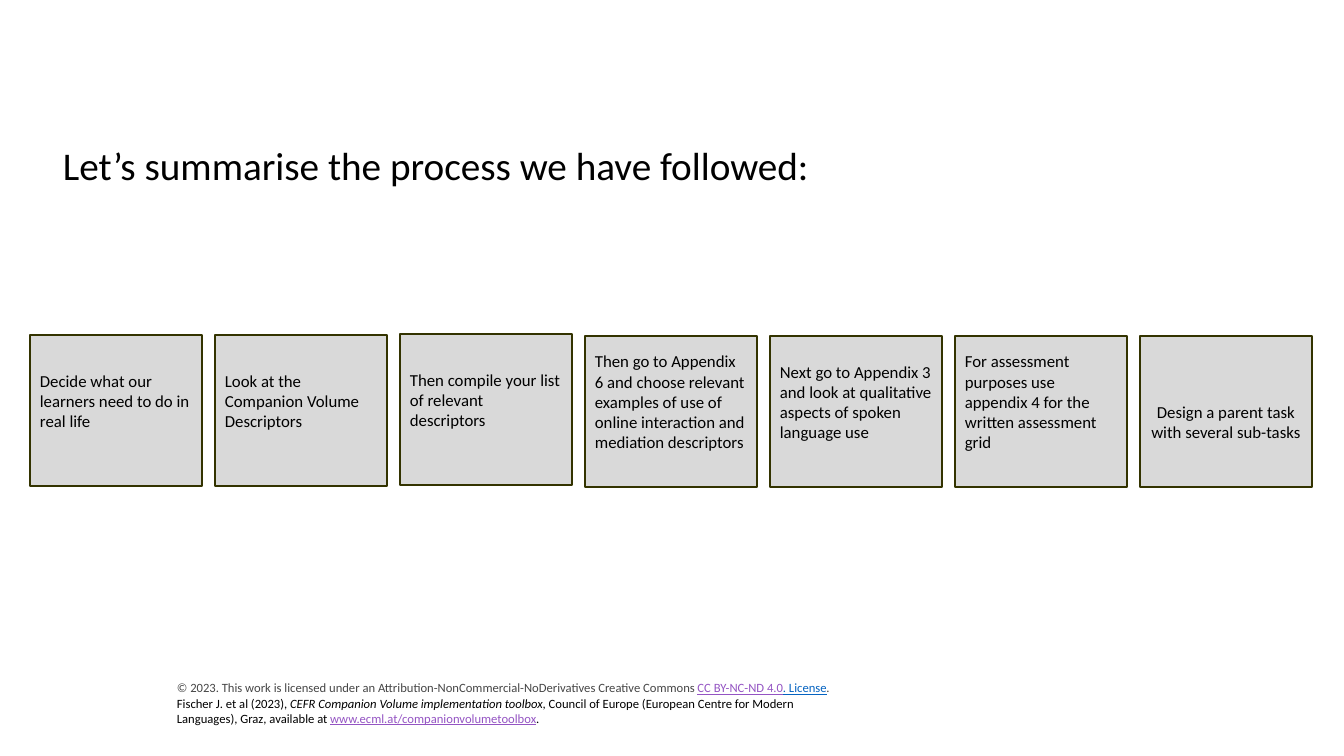
from pptx import Presentation
from pptx.dml.color import RGBColor
from pptx.enum.shapes import MSO_SHAPE
from pptx.enum.text import MSO_ANCHOR, PP_ALIGN
from pptx.util import Pt

PX = 914400 / 100.8
RECTANGLE = MSO_SHAPE.RECTANGLE
MIDDLE = MSO_ANCHOR.MIDDLE
LEFT, CENTER = PP_ALIGN.LEFT, PP_ALIGN.CENTER

FONT = "Calibri"
BLACK = RGBColor(0x00, 0x00, 0x00)
GRAY = RGBColor(0x46, 0x46, 0x46)
PURPLE = RGBColor(0x94, 0x54, 0xC3)
BLUE = RGBColor(0x05, 0x63, 0xC1)
STEP_FILL = RGBColor(0xD9, 0xD9, 0xD9)
STEP_LINE = RGBColor(0x33, 0x33, 0x00)

STEP_LEFT, STEP_PITCH = 30, 185
STEP_WIDTH, STEP_HEIGHT = 172, 151
INSET, TEXT_LINE = 5, 20

# Top, text, alignment, extra inset above, extra inset below
STEPS = [
    (335, "Decide what our learners need to do in real life", LEFT, 0, TEXT_LINE),
    (335, "Look at the Companion Volume Descriptors", LEFT, 0, TEXT_LINE),
    (334, "Then compile your list of relevant descriptors", LEFT, 0, TEXT_LINE),
    (336, "Then go to Appendix 6 and choose relevant examples of use of "
          "online interaction and mediation descriptors", LEFT, 0, TEXT_LINE),
    (336, "Next go to Appendix 3 and look at qualitative aspects of spoken "
          "language use", LEFT, 0, TEXT_LINE),
    (336, "For assessment purposes use appendix 4 for the written assessment "
          "grid", LEFT, 0, TEXT_LINE),
    (336, "Design a parent task with several sub-tasks", CENTER, TEXT_LINE, 0),
]

# Text, colour, underlined, italic
LICENCE = [
    [
        ("© 2023. This work is licensed under an Attribution-NonCommercial-"
         "NoDerivatives Creative Commons ", GRAY, False, False),
        ("CC BY-NC-ND 4.0", PURPLE, True, False),
        (". License", BLUE, True, False),
        (".", GRAY, False, True),
    ],
    [
        ("Fischer J. et al (2023), ", BLACK, False, False),
        ("CEFR Companion Volume implementation toolbox", BLACK, False, True),
        (", Council of Europe (European Centre for Modern Languages), Graz, "
         "available at ", BLACK, False, False),
        ("www.ecml.at/companionvolumetoolbox", PURPLE, True, False),
        (".", BLACK, False, False),
    ],
]


def px(length):
    return round(length * PX)


def style_font(font, size, color):
    font.name = FONT
    font.size = Pt(size)
    font.color.rgb = color


def add_text_frame(page, left, top, width, height):
    box = page.shapes.add_textbox(px(left), px(top), px(width), px(height))
    box.text_frame.word_wrap = True
    return box.text_frame


def add_heading(page, text):
    frame = add_text_frame(page, 53, 142, 1237, 447)
    frame.text = text
    para = frame.paragraphs[0]
    para.line_spacing = 0.9
    style_font(para.runs[0].font, 28, BLACK)


def add_step(page, index, top, text, alignment, above, below):
    box = page.shapes.add_shape(
        RECTANGLE, px(STEP_LEFT + index * STEP_PITCH), px(top),
        px(STEP_WIDTH), px(STEP_HEIGHT))
    box.shadow.inherit = False
    box.fill.solid()
    box.fill.fore_color.rgb = STEP_FILL
    box.line.color.rgb = STEP_LINE
    box.line.width = Pt(1)
    frame = box.text_frame
    frame.word_wrap = True
    frame.vertical_anchor = MIDDLE
    frame.margin_top = px(INSET + above)
    frame.margin_bottom = px(INSET + below)
    frame.text = text
    para = frame.paragraphs[0]
    para.alignment = alignment
    style_font(para.runs[0].font, 12, BLACK)


def add_licence(page, lines):
    frame = add_text_frame(page, 167, 675, 690, 56)
    frame.vertical_anchor = MIDDLE
    frame.text = "\n".join("" for line in lines)
    for para, spans in zip(frame.paragraphs, lines):
        for text, color, underlined, italic in spans:
            span = para.add_run()
            span.text = text
            style_font(span.font, 9, color)
            span.font.underline = underlined
            span.font.italic = italic


def main():
    deck = Presentation()
    deck.slide_width, deck.slide_height = px(1344), px(756)
    page = deck.slides.add_slide(deck.slide_layouts[6])
    add_licence(page, LICENCE)
    add_heading(page, "Let’s summarise the process we have followed:")
    for index, step in enumerate(STEPS):
        add_step(page, index, *step)
    deck.save("out.pptx")


if __name__ == "__main__":
    main()
